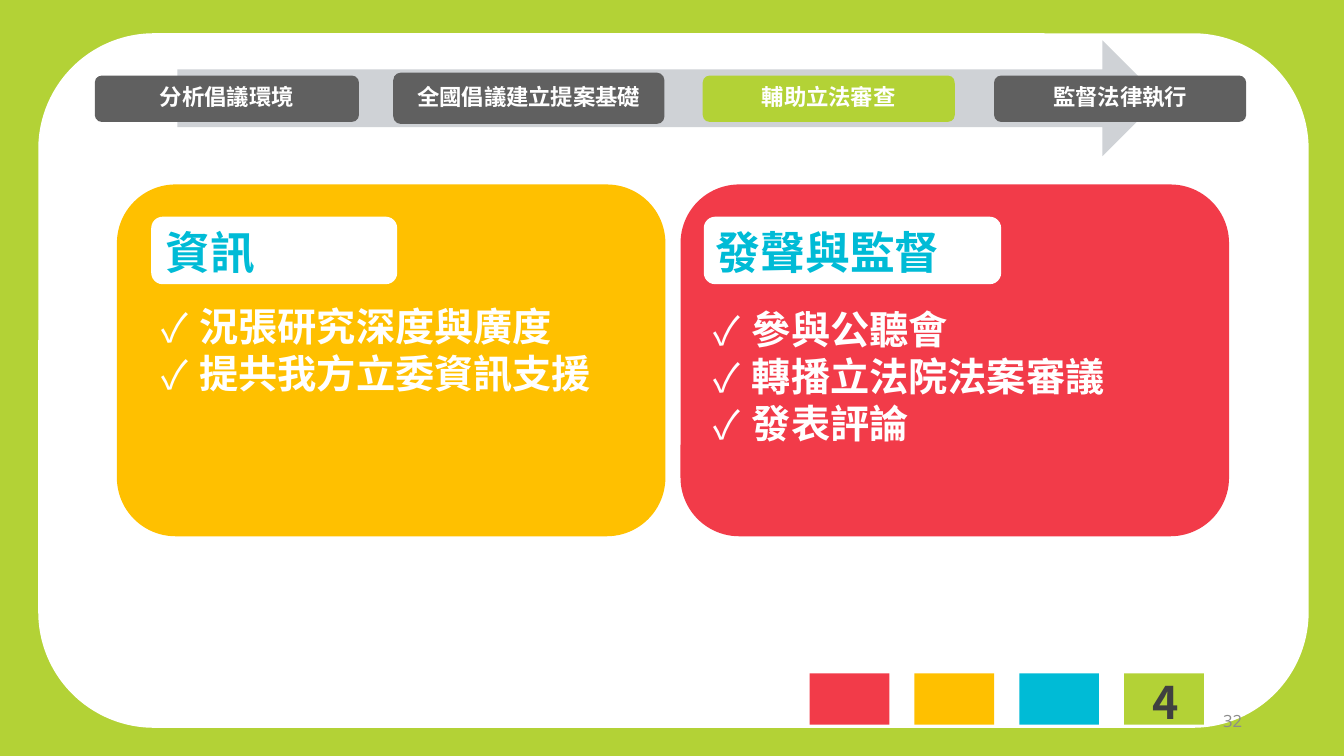
import pptx
import pptx.dml.color
import pptx.enum.shapes
import pptx.enum.text
import pptx.oxml.ns
import pptx.util
import lxml.etree

Inches = pptx.util.Inches
Pt = pptx.util.Pt
SHAPE = pptx.enum.shapes.MSO_SHAPE
ALIGN = pptx.enum.text.PP_ALIGN
ANCHOR = pptx.enum.text.MSO_ANCHOR

HEADING_FONT = "Noto Sans CJK SC"
NUMBER_FONT = "Open Sans"
GREEN, RED, YELLOW, BLUE = "B3D236", "F23B49", "FFC000", "00BBD6"
WHITE, GRAY, PALE_GRAY = "FFFFFF", "606060", "CFD2D6"

STAGES = [
    ("分析倡議環境", (0.94, 0.75, 2.62, 0.46), GRAY),
    ("全國倡議建立提案基礎", (3.9, 0.72, 2.69, 0.51), GRAY),
    ("輔助立法審查", (6.97, 0.75, 2.5, 0.46), GREEN),
    ("監督法律執行", (9.86, 0.75, 2.5, 0.46), GRAY),
]
CARDS = [
    {"title": "資訊", "color": YELLOW, "left": 1.16,
     "label": (1.5, 2.44), "title_box": (1.54, 2.95), "list_box": (1.5, 2.95, 4.6, 1.04),
     "points": ["況張研究深度與廣度", "提共我方立委資訊支援"]},
    {"title": "發聲與監督", "color": RED, "left": 6.75,
     "label": (6.98, 2.95), "title_box": (7, 2.47), "list_box": (6.98, 2.98, 4.14, 1.51),
     "points": ["參與公聽會", "轉播立法院法案審議", "發表評論"]},
]
SECTION_COLORS = [RED, YELLOW, BLUE, GREEN]
SECTION_LEFT, SECTION_PITCH = 8.03, 1.04


def rgb(color):
    return pptx.dml.color.RGBColor.from_string(color)


def add_block(slide, kind, box, color, corner=None):
    shape = slide.shapes.add_shape(kind, *map(Inches, box))
    shape.shadow.inherit = False
    shape.fill.solid()
    shape.fill.fore_color.rgb = rgb(color)
    shape.line.fill.background()
    if corner is not None:
        shape.adjustments[0] = corner
    return shape


def add_bullet(paragraph):
    properties = paragraph._p.get_or_add_pPr()
    properties.set("marL", str(Inches(0.38)))
    properties.set("indent", str(-Inches(0.38)))
    for tag, name, value in (("a:buFont", "typeface", HEADING_FONT), ("a:buChar", "char", "✓")):
        element = lxml.etree.SubElement(properties, pptx.oxml.ns.qn(tag))
        element.set(name, value)


def write(shape, lines, size, color, font=HEADING_FONT, bold=True,
          align=ALIGN.LEFT, anchor=ANCHOR.TOP, bullets=False, spacing=None):
    frame = shape.text_frame
    frame.word_wrap = True
    frame.vertical_anchor = anchor
    for index, line in enumerate(lines):
        paragraph = frame.add_paragraph() if index else frame.paragraphs[0]
        paragraph.alignment = align
        if spacing:
            paragraph.line_spacing = spacing
        if bullets:
            add_bullet(paragraph)
        run = paragraph.add_run()
        run.text = line
        run.font.size = Pt(size)
        run.font.bold = bold
        run.font.color.rgb = rgb(color)
        run.font.name = font
        east_asian = lxml.etree.SubElement(run._r.get_or_add_rPr(), pptx.oxml.ns.qn("a:ea"))
        east_asian.set("typeface", font)


def add_text(slide, box, lines, size, color, **style):
    write(slide.shapes.add_textbox(*map(Inches, box)), lines, size, color, **style)


def add_stages(slide):
    add_block(slide, SHAPE.RIGHT_ARROW, (1.76, 0.4, 9.75, 1.15), PALE_GRAY)
    for name, box, color in STAGES:
        stage = add_block(slide, SHAPE.ROUNDED_RECTANGLE, box, color, 0.15)
        frame = stage.text_frame
        frame.margin_left = frame.margin_right = Inches(0.07)
        frame.margin_top = frame.margin_bottom = Inches(0.07)
        write(stage, [name], 16, WHITE, align=ALIGN.CENTER, anchor=ANCHOR.MIDDLE, spacing=0.9)


def add_card(slide, card):
    add_block(slide, SHAPE.ROUNDED_RECTANGLE, (card["left"], 1.83, 5.44, 3.49), card["color"])
    label_left, label_width = card["label"]
    add_block(slide, SHAPE.ROUNDED_RECTANGLE, (label_left, 2.15, label_width, 0.67), WHITE, 0.17)
    title_left, title_width = card["title_box"]
    add_text(slide, (title_left, 2.18, title_width, 0.64), [card["title"]], 32, BLUE)
    add_text(slide, card["list_box"], card["points"], 28, WHITE, bullets=True)


def main():
    presentation = pptx.Presentation()
    presentation.slide_width = Inches(13.33)
    presentation.slide_height = Inches(7.5)
    slide = presentation.slides.add_slide(presentation.slide_layouts[6])
    slide.background.fill.solid()
    slide.background.fill.fore_color.rgb = rgb(GREEN)

    add_block(slide, SHAPE.ROUNDED_RECTANGLE, (0.38, 0.33, 12.6, 6.89), WHITE)
    add_text(slide, (9.42, 6.95, 3, 0.4), ["32"], 12, "8C8C8C", font=NUMBER_FONT,
             bold=False, align=ALIGN.RIGHT, anchor=ANCHOR.MIDDLE)
    for index, color in enumerate(SECTION_COLORS):
        left = SECTION_LEFT + index * SECTION_PITCH
        add_block(slide, SHAPE.RECTANGLE, (left, 6.68, 0.79, 0.51), color)
    add_text(slide, (11.33, 6.64, 0.45, 0.64), ["4"], 32, "404040")
    add_stages(slide)
    for card in CARDS:
        add_card(slide, card)
    presentation.save("out.pptx")


if __name__ == "__main__":
    main()
